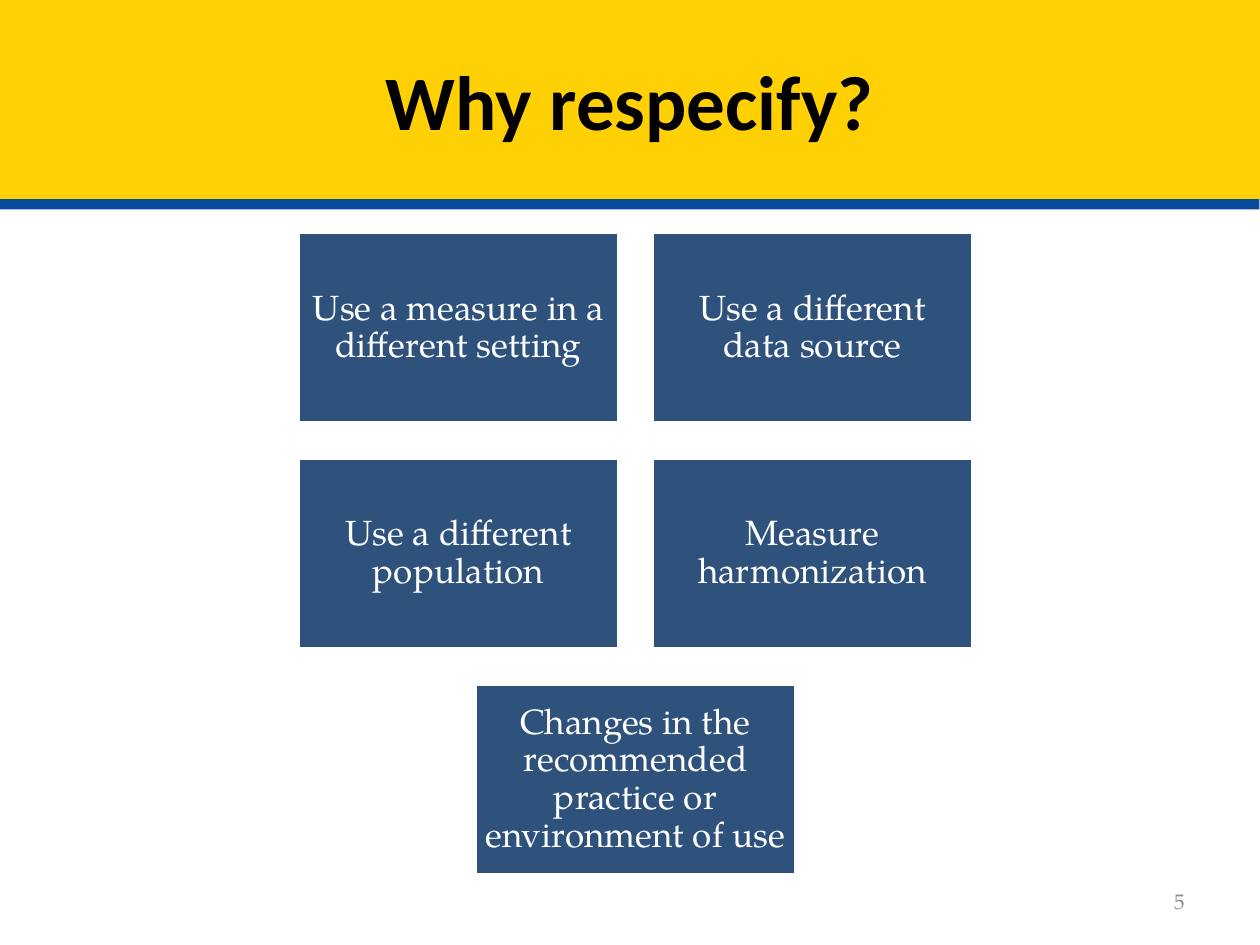
from lxml import etree
from pptx import Presentation
from pptx import util as u
from pptx.dml.color import RGBColor
from pptx.enum import shapes, text
from pptx.oxml import ns

PX = 914400 // 126
BODY_FONT = "TeX Gyre Pagella"

REASONS = [
    "Use a measure in a different setting",
    "Use a different data source",
    "Use a different population",
    "Measure harmonization",
    "Changes in the recommended practice or environment of use",
]
COLUMNS = 2
GRID_LEFT, GRID_TOP = 297, 231
BOX_WIDTH, BOX_HEIGHT = 323, 193
COLUMN_STEP, ROW_STEP = 354, 226


def px(*lengths):
    return [u.Emu(length * PX) for length in lengths]


def fill(target, color):
    target.fill.solid()
    target.fill.fore_color.rgb = RGBColor.from_string(color)


def write(frame, content, size=20, font=BODY_FONT, color="FFFFFF", bold=False,
          align=text.PP_ALIGN.CENTER, spacing=None, inset=None):
    frame.word_wrap = True
    frame.vertical_anchor = text.MSO_ANCHOR.MIDDLE
    if inset is not None:
        frame.margin_left, frame.margin_top, frame.margin_right, frame.margin_bottom = px(*[inset] * 4)
    paragraph = frame.paragraphs[0]
    paragraph.alignment = align
    paragraph.line_spacing = spacing
    run = paragraph.add_run()
    run.text = content
    run.font.size = u.Pt(size)
    run.font.name = font
    run.font.bold = bold
    run.font.color.rgb = RGBColor.from_string(color)


def add_hard_shadow(shape, color, distance, angle):
    shape.shadow.inherit = False
    effects = shape.element.spPr.find(ns.qn("a:effectLst"))
    shadow = etree.SubElement(effects, ns.qn("a:outerShdw"), blurRad="0",
                              dist=str(u.Pt(distance)), dir=str(angle * 60000),
                              algn="ctr", rotWithShape="0")
    etree.SubElement(shadow, ns.qn("a:srgbClr"), val=color)


def add_title(slide, content):
    title = slide.shapes.title
    title.left, title.top, title.width, title.height = px(0, 0, 1260, 199)
    fill(title, "FFD004")
    add_hard_shadow(title, "084A9C", distance=6, angle=94)
    write(title.text_frame, content, size=44, font="Calibri", color="000000", bold=True)


def add_box(group, content, left, top):
    box = group.shapes.add_shape(shapes.MSO_SHAPE.RECTANGLE,
                                 *px(left, top, BOX_WIDTH, BOX_HEIGHT))
    box.shadow.inherit = False
    fill(box, "2F527D")
    box.line.color.rgb = RGBColor.from_string("FFFFFF")
    box.line.width = u.Pt(3.78)
    write(box.text_frame, content, spacing=0.9, inset=10)


def add_reason_grid(slide):
    group = slide.shapes.add_group_shape()
    for index, reason in enumerate(REASONS):
        row, column = divmod(index, COLUMNS)
        # A row that is not full is centred under the others
        in_row = min(COLUMNS, len(REASONS) - row * COLUMNS)
        indent = (COLUMNS - in_row) * COLUMN_STEP // 2
        add_box(group, reason, GRID_LEFT + indent + column * COLUMN_STEP,
                GRID_TOP + row * ROW_STEP)


def add_slide_number(slide, number):
    box = slide.shapes.add_textbox(*px(903, 876, 294, 50))
    write(box.text_frame, number, size=12, color="8C8C8C", align=text.PP_ALIGN.RIGHT)


def main():
    presentation = Presentation()
    presentation.slide_width, presentation.slide_height = u.Inches(10), u.Inches(7.5)
    slide = presentation.slides.add_slide(presentation.slide_layouts.get_by_name("Title Only"))

    # Title band
    add_title(slide, "Why respecify?")
    # Reasons
    add_reason_grid(slide)
    # Footer
    add_slide_number(slide, "5")

    presentation.save("out.pptx")


if __name__ == "__main__":
    main()
